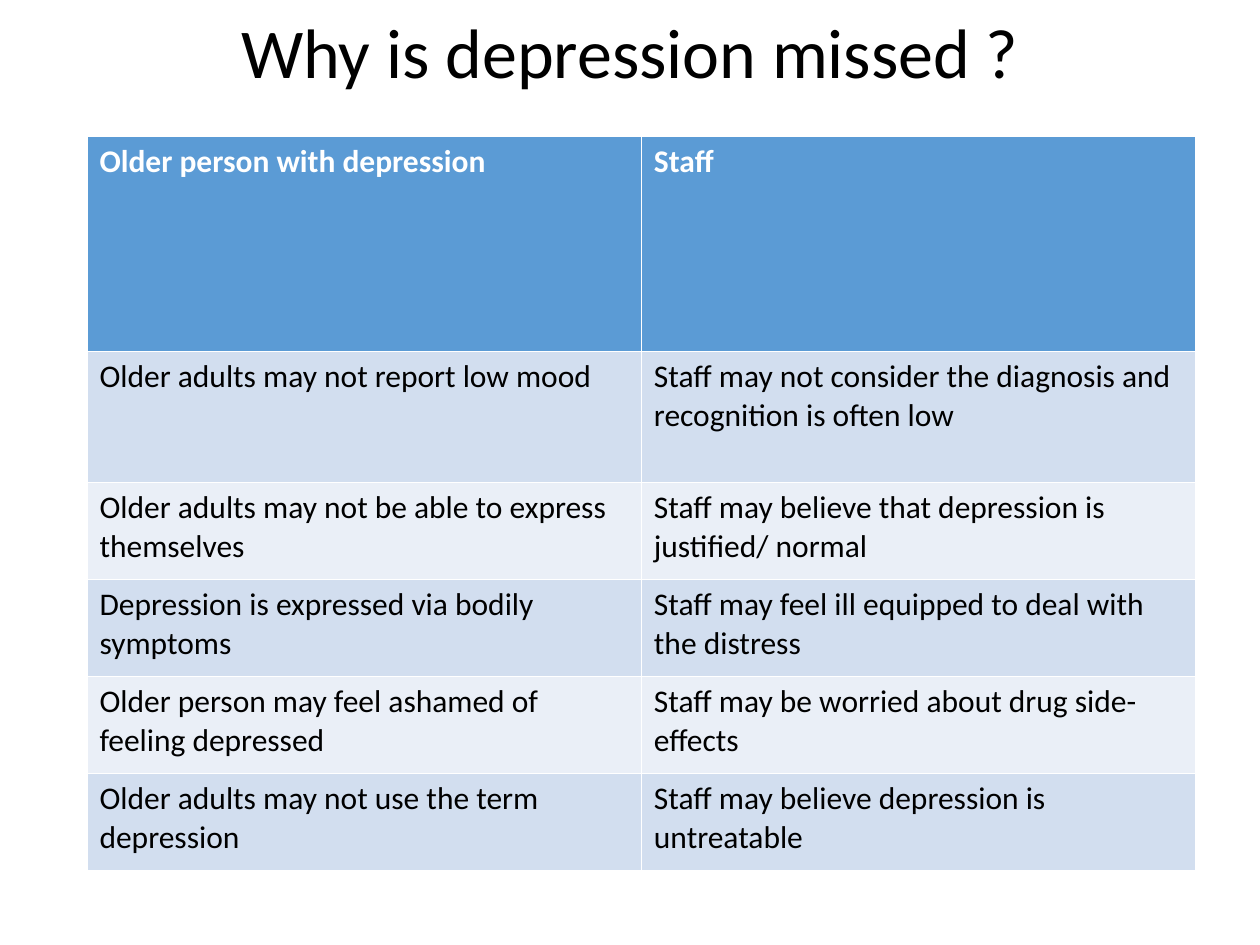
from pptx import Presentation
from pptx.dml.color import RGBColor
from pptx.enum.text import MSO_ANCHOR, MSO_AUTO_SIZE, PP_ALIGN
from pptx.util import Inches, Pt

TITLE = "Why is depression missed ?"
HEADER = ("Older person with depression", "Staff")
REASONS = [
    ("Older adults may not report low mood",
     "Staff may not consider the diagnosis and recognition is often low"),
    ("Older adults may not be able to express themselves",
     "Staff may believe that depression is justified/ normal"),
    ("Depression is expressed via bodily symptoms",
     "Staff may feel ill equipped to deal with the distress"),
    ("Older person may feel ashamed of feeling depressed",
     "Staff may be worried about drug side-effects"),
    ("Older adults may not use the term depression",
     "Staff may believe depression is untreatable"),
]

FONT = "Calibri"
BLACK = RGBColor(0x00, 0x00, 0x00)
WHITE = RGBColor(0xFF, 0xFF, 0xFF)
HEADER_BLUE = RGBColor(0x5B, 0x9B, 0xD5)
BANDS = (RGBColor(0xD2, 0xDE, 0xEF), RGBColor(0xEA, 0xEF, 0xF7))

LEFT = 0.69
TABLE_TOP = 1.08
COLUMN_WIDTH = 4.4
ROW_HEIGHTS = [1.71, 1.04] + [0.77] * (len(REASONS) - 1)


def add_text(paragraph, text, size, color, bold=False):
    run = paragraph.add_run()
    run.text = text
    run.font.name = FONT
    run.font.size = Pt(size)
    run.font.bold = bold
    run.font.color.rgb = color


def add_title(slide):
    title = slide.shapes.title
    title.left, title.top = Inches(LEFT), Inches(-0.08)
    title.width, title.height = Inches(8.62), Inches(1.05)
    frame = title.text_frame
    frame.auto_size = MSO_AUTO_SIZE.NONE
    frame.vertical_anchor = MSO_ANCHOR.MIDDLE
    paragraph = frame.paragraphs[0]
    paragraph.alignment = PP_ALIGN.CENTER
    paragraph.line_spacing = 0.9
    add_text(paragraph, TITLE, 40, BLACK)


def add_reasons(slide):
    rows = [HEADER] + REASONS
    columns = len(HEADER)
    table = slide.shapes.add_table(
        len(rows), columns, Inches(LEFT), Inches(TABLE_TOP),
        Inches(COLUMN_WIDTH * columns), Inches(sum(ROW_HEIGHTS))).table
    for column in table.columns:
        column.width = Inches(COLUMN_WIDTH)
    for index, texts in enumerate(rows):
        is_header = index == 0
        table.rows[index].height = Inches(ROW_HEIGHTS[index])
        fill = HEADER_BLUE if is_header else BANDS[(index - 1) % 2]
        color = WHITE if is_header else BLACK
        for cell, text in zip(table.rows[index].cells, texts):
            cell.fill.solid()
            cell.fill.fore_color.rgb = fill
            add_text(cell.text_frame.paragraphs[0], text, 18, color, is_header)


def main():
    presentation = Presentation()
    presentation.slide_width = Inches(10)
    presentation.slide_height = Inches(7.5)
    slide = presentation.slides.add_slide(presentation.slide_layouts[5])
    add_title(slide)
    add_reasons(slide)
    presentation.save("out.pptx")


if __name__ == "__main__":
    main()
